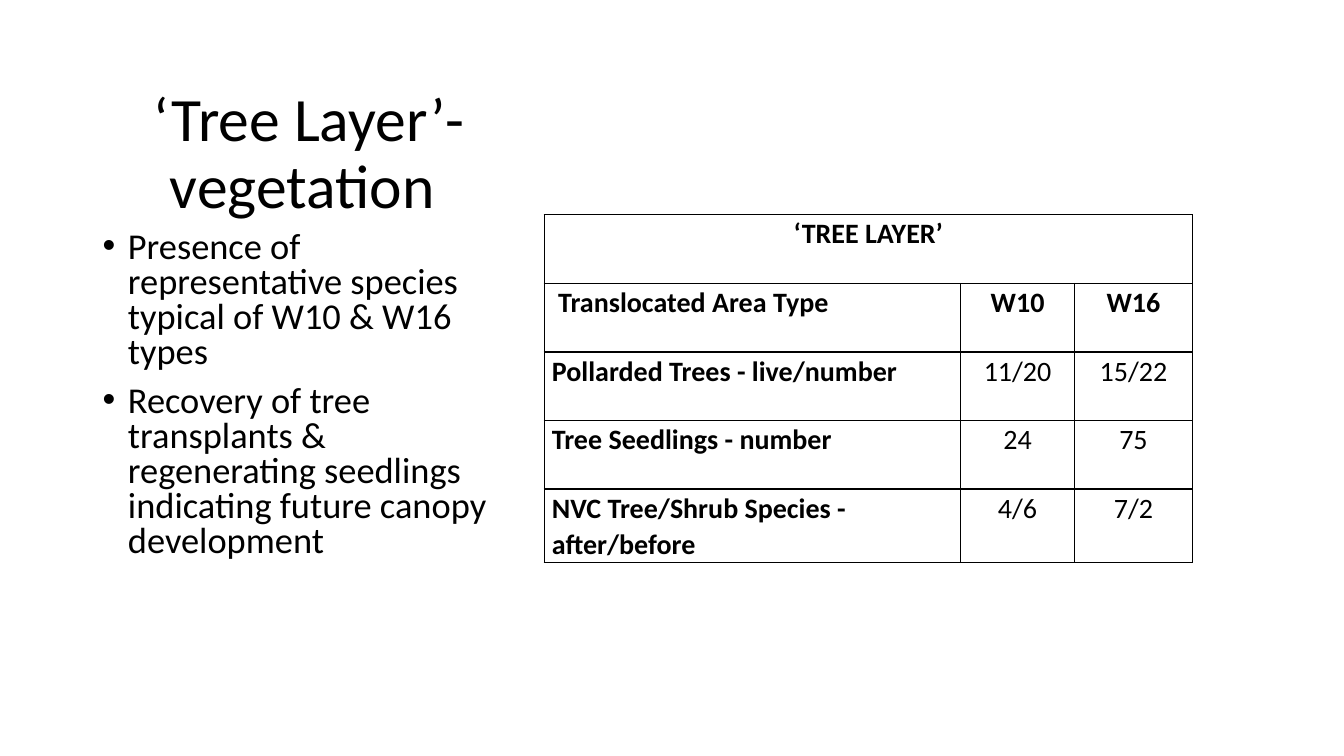
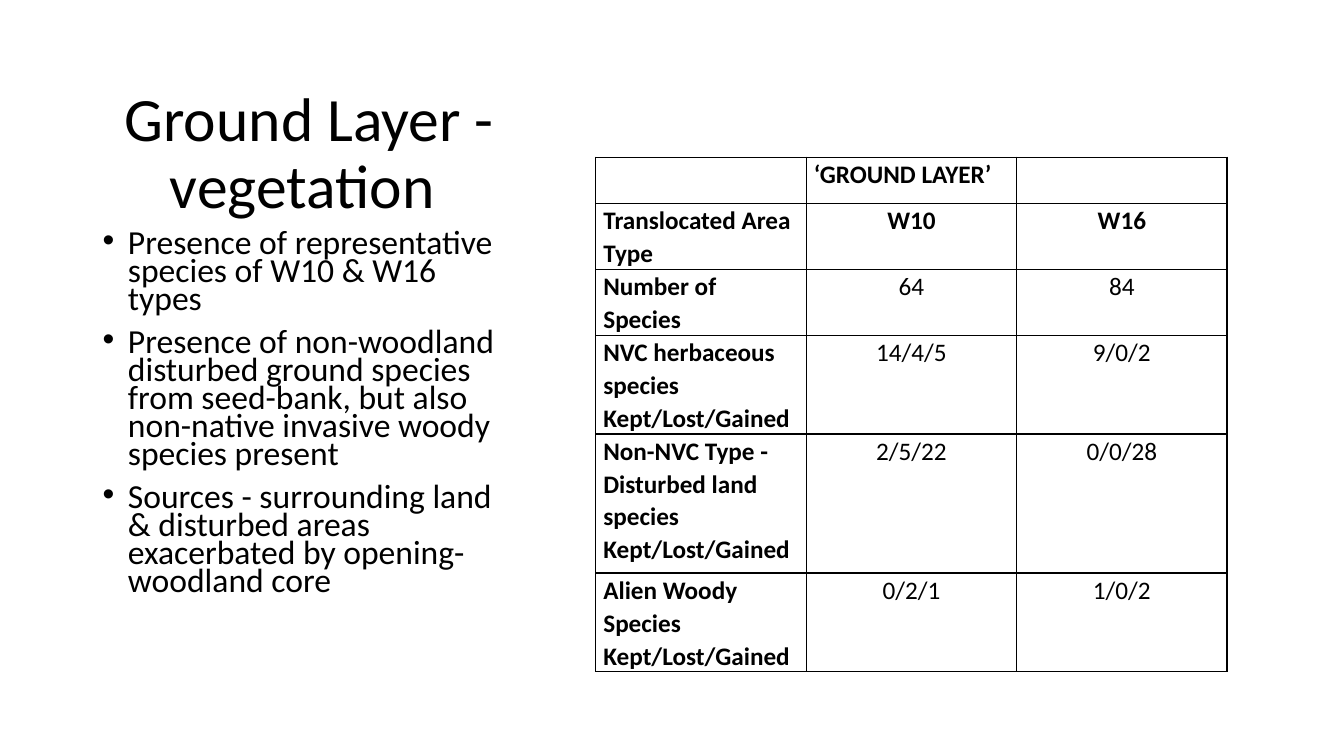
from dataclasses import dataclass

from lxml import etree
from pptx import Presentation
from pptx.dml.color import RGBColor
from pptx.enum.text import MSO_ANCHOR, MSO_AUTO_SIZE, PP_ALIGN
from pptx.oxml.ns import qn
from pptx.util import Pt

LEFT, CENTER = PP_ALIGN.LEFT, PP_ALIGN.CENTER
TOP, BOTTOM = MSO_ANCHOR.TOP, MSO_ANCHOR.BOTTOM
NO_FIT = MSO_AUTO_SIZE.NONE

BLACK = RGBColor(0x00, 0x00, 0x00)
WHITE = RGBColor(0xFF, 0xFF, 0xFF)
FONT = "Calibri"

SIDE, WIDTH = 66.2, 309.6
TITLE_TOP, TITLE_HIGH = 36, 126
BODY_TOP, BODY_HIGH = 162, 300
INDENT = 18
PAD = 5.4


@dataclass
class Grid:
    left: float
    top: float
    cols: list[float]
    rows: list[float]
    size: float
    cells: list[list[str]]
    span: bool = False


@dataclass
class Page:
    title: str
    points: list[str]
    size: float
    spacing: float
    grid: Grid


PAGES = [
    Page(
        "‘Tree Layer’- vegetation ",
        [
            "Presence of representative species typical of W10 & W16 types",
            "Recovery of tree transplants & regenerating seedlings "
            "indicating future canopy development",
        ],
        26, 0.8,
        Grid(
            388.8, 153.4, [297.4, 81.4, 84.2], [49] * 5, 20,
            [
                ["‘TREE LAYER’", "", ""],
                [" Translocated Area Type", "W10", "W16"],
                ["Pollarded Trees - live/number", "11/20", "15/22"],
                ["Tree Seedlings - number", "24", "75"],
                ["NVC Tree/Shrub Species - after/before", "4/6", "7/2"],
            ],
            span=True,
        ),
    ),
    Page(
        "Ground Layer - vegetation ",
        [
            "Presence of representative species of W10 & W16 types",
            "Presence of non-woodland disturbed ground species from "
            "seed-bank, but also non-native invasive woody species present",
            "Sources - surrounding land & disturbed areas exacerbated by "
            "opening-woodland core",
        ],
        24, 0.7,
        Grid(
            425.6, 112.3, [150.3] * 3, [33.1] * 3 + [66.2, 99.4, 66.2], 18,
            [
                ["", "‘GROUND LAYER’", ""],
                ["Translocated Area Type", "W10", "W16"],
                ["Number of Species", "64", "84"],
                ["NVC herbaceous species\nKept/Lost/Gained", "14/4/5", "9/0/2"],
                ["Non-NVC Type - Disturbed land species\nKept/Lost/Gained",
                 "2/5/22", "0/0/28"],
                ["Alien Woody Species\nKept/Lost/Gained", "0/2/1", "1/0/2"],
            ],
        ),
    ),
]


def style(frame, size: float, spacing: float, align, bold: bool = False) -> None:
    for para in frame.paragraphs:
        para.alignment = align
        para.line_spacing = spacing
        para.space_before = para.space_after = Pt(0)
        for run in para.runs:
            run.font.name = FONT
            run.font.size = Pt(size)
            run.font.bold = bold
            run.font.color.rgb = BLACK


def place(shape, top: float, high: float, anchor) -> None:
    shape.left, shape.top = Pt(SIDE), Pt(top)
    shape.width, shape.height = Pt(WIDTH), Pt(high)
    frame = shape.text_frame
    frame.word_wrap = True
    frame.auto_size = NO_FIT
    frame.vertical_anchor = anchor


def add_title(slide, page: Page) -> None:
    title = slide.shapes.title
    place(title, TITLE_TOP, TITLE_HIGH, BOTTOM)
    title.text_frame.text = page.title
    style(title.text_frame, 44, 0.9, CENTER)


def add_body(slide, page: Page) -> None:
    body = slide.placeholders[1]
    place(body, BODY_TOP, BODY_HIGH, TOP)
    frame = body.text_frame
    frame.text = "\n".join(page.points)
    style(frame, page.size, page.spacing, LEFT)
    for para in frame.paragraphs:
        para.space_before = Pt(10)
        props = para._p.get_or_add_pPr()
        props.set("marL", str(Pt(INDENT)))
        props.set("indent", str(-Pt(INDENT)))
        etree.SubElement(props, qn("a:buChar")).set("char", "•")


def add_edges(cell) -> None:
    props = cell._tc.get_or_add_tcPr()
    for side in ("lnL", "lnR", "lnT", "lnB"):
        line = etree.SubElement(props, qn(f"a:{side}"), w=str(Pt(1)))
        fill = etree.SubElement(line, qn("a:solidFill"))
        etree.SubElement(fill, qn("a:srgbClr"), val=str(BLACK))


def add_grid(slide, grid: Grid) -> None:
    shape = slide.shapes.add_table(
        len(grid.rows), len(grid.cols), Pt(grid.left), Pt(grid.top),
        Pt(sum(grid.cols)), Pt(sum(grid.rows)))
    table = shape.table
    table.first_row = table.horz_banding = False
    for col, wide in zip(table.columns, grid.cols):
        col.width = Pt(wide)
    for row, high in zip(table.rows, grid.rows):
        row.height = Pt(high)
    if grid.span:
        table.cell(0, 0).merge(table.cell(0, len(grid.cols) - 1))
    for i, texts in enumerate(grid.cells):
        for j, text in enumerate(texts):
            cell = table.cell(i, j)
            add_edges(cell)
            cell.fill.background()
            if not text:
                continue
            cell.margin_left = cell.margin_right = Pt(PAD)
            cell.margin_top = cell.margin_bottom = Pt(0)
            cell.text_frame.text = text
            mid = grid.span if i == 0 else j > 0
            style(cell.text_frame, grid.size, 1.07,
                  CENTER if mid else LEFT, bold=i < 2 or j == 0)


def main() -> None:
    deck = Presentation()
    deck.slide_width, deck.slide_height = Pt(960), Pt(540)
    back = deck.slide_master.background.fill
    back.solid()
    back.fore_color.rgb = WHITE
    for page in PAGES:
        slide = deck.slides.add_slide(deck.slide_layouts[1])
        add_title(slide, page)
        add_body(slide, page)
        add_grid(slide, page.grid)
    deck.save("out.pptx")


if __name__ == "__main__":
    main()
